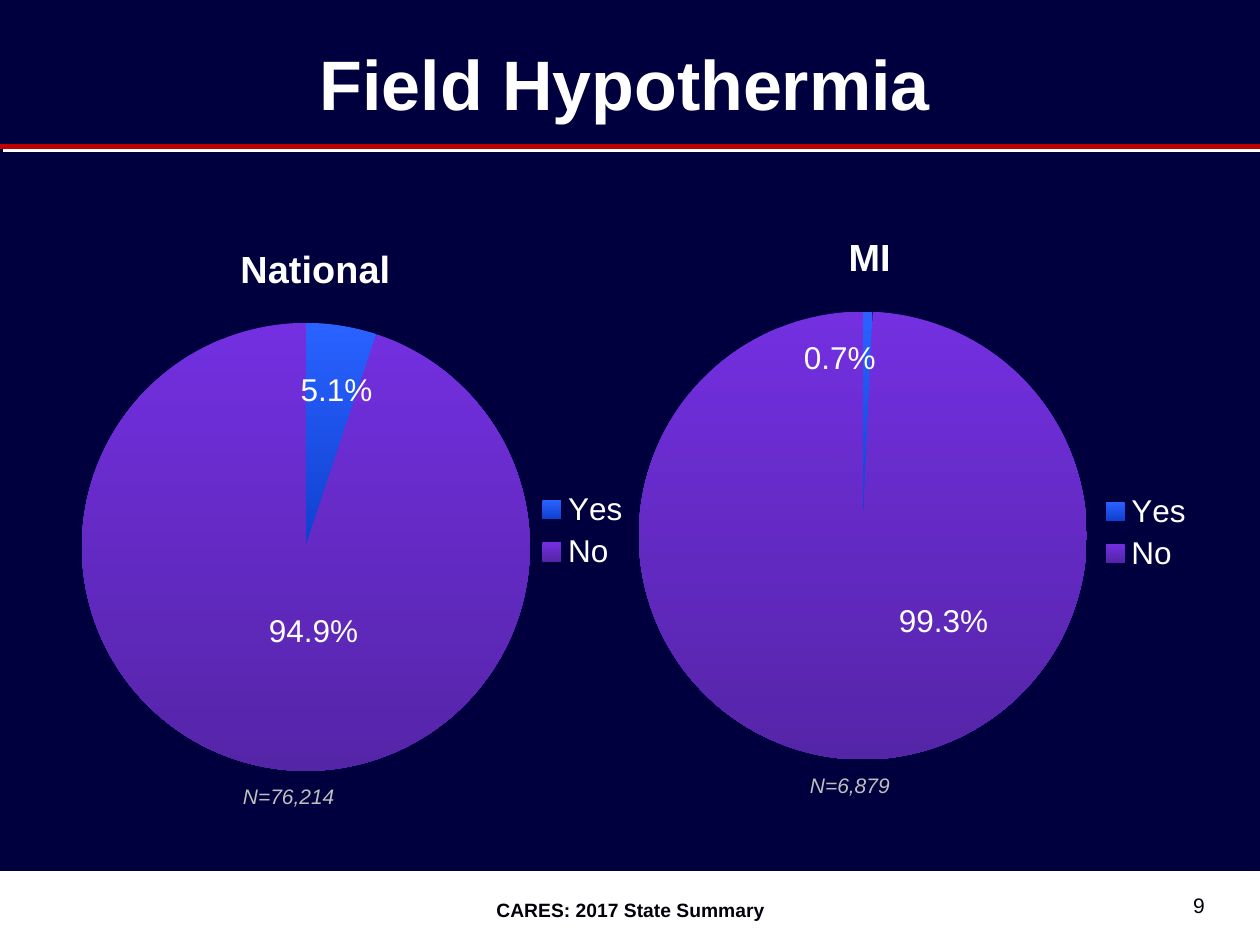
from dataclasses import dataclass

from lxml.etree import SubElement
from pptx import Presentation
from pptx.chart.data import CategoryChartData
from pptx.dml.color import RGBColor
from pptx.enum.chart import XL_CHART_TYPE as ChartType
from pptx.enum.chart import XL_LABEL_POSITION as LabelPosition
from pptx.enum.chart import XL_LEGEND_POSITION as LegendPosition
from pptx.enum.shapes import MSO_CONNECTOR as Connector
from pptx.enum.shapes import MSO_SHAPE as Shape
from pptx.enum.text import MSO_ANCHOR as Anchor
from pptx.enum.text import PP_ALIGN as Align
from pptx.oxml import parse_xml
from pptx.oxml.ns import nsdecls, qn
from pptx.util import Inches, Pt


@dataclass(frozen=True)
class Theme:
    font: str = "Arial"
    background: str = "00003E"
    white: str = "FFFFFF"
    footer_text: str = "00000C"
    note: str = "BFBFBF"
    rule: str = "C00000"
    slices: tuple = (("2962FF", "1040D0"), ("732FE0", "5525A8"))
    title_size: float = 40
    chart_title_size: float = 21.6
    chart_size: float = 18
    note_size: float = 12
    footer_size: float = 11


THEME = Theme()


def color(value):
    return RGBColor.from_string(value)


def format_font(font, size, text_color, **styles):
    font.color.rgb = color(text_color)
    values = {"name": THEME.font, "size": Pt(size), **styles}
    for name, value in values.items():
        setattr(font, name, value)


def add_text(slide, text, box, size, text_color, align=Align.LEFT,
             anchor=Anchor.TOP, **styles):
    frame = slide.shapes.add_textbox(*map(Inches, box)).text_frame
    frame.word_wrap = True
    frame.vertical_anchor = anchor
    paragraph = frame.paragraphs[0]
    paragraph.alignment = align
    run = paragraph.add_run()
    run.text = text
    format_font(run.font, size, text_color, **styles)


def add_footer(slide):
    band = slide.shapes.add_shape(
        Shape.RECTANGLE, Inches(0), Inches(6.92), Inches(10), Inches(0.58))
    band.shadow.inherit = False
    band.fill.solid()
    band.fill.fore_color.rgb = color(THEME.white)
    band.line.color.rgb = color(THEME.white)
    band.line.width = Pt(0.75)
    add_text(slide, "CARES: 2017 State Summary", (3.42, 7.08, 3.17, 0.29),
             THEME.footer_size, THEME.footer_text, Align.CENTER, bold=True)
    add_text(slide, "9", (7.33, 7, 2.33, 0.33), THEME.note_size,
             THEME.footer_text, Align.RIGHT, Anchor.BOTTOM)


def add_title_rule(slide):
    """Draw the red rule with its hard white shadow."""
    rule = slide.shapes.add_connector(
        Connector.STRAIGHT, Inches(0), Inches(1.16), Inches(10), Inches(1.16))
    rule.line.color.rgb = color(THEME.rule)
    rule.line.width = Pt(3)
    rule.element.spPr.append(parse_xml(
        f'<a:effectLst {nsdecls("a")}>'
        f'<a:outerShdw dist="{Pt(2.8)}" dir="2700000" algn="ctr" rotWithShape="0">'
        f'<a:srgbClr val="{THEME.white}"/></a:outerShdw></a:effectLst>'))


def set_layout(parent, index, **values):
    """Give a chart part a manual layout, in fractions of the chart."""
    for old in parent.findall(qn("c:layout")):
        parent.remove(old)
    layout = parse_xml(f'<c:layout {nsdecls("c")}><c:manualLayout/></c:layout>')
    for name, value in values.items():
        SubElement(layout[0], qn(f"c:{name}"), val=str(value))
    parent.insert(index, layout)


def format_slice(point, colors):
    fill = point.format.fill
    fill.gradient()
    fill.gradient_angle = 270
    for stop, value in zip(fill.gradient_stops, colors):
        stop.color.rgb = color(value)
    point.format.line.fill.background()


def format_labels(series, offsets):
    """Show percentages, each moved by its offset from the slice centre."""
    labels = series.data_labels
    values = {"show_percentage": True, "show_value": False,
              "number_format": "0.0%", "number_format_is_linked": False,
              "position": LabelPosition.CENTER}
    for name, value in values.items():
        setattr(labels, name, value)
    format_font(labels.font, THEME.chart_size, THEME.white)
    for index, (colors, (x, y)) in enumerate(zip(THEME.slices, offsets)):
        point = series.points[index]
        format_slice(point, colors)
        point.data_label.position = LabelPosition.CENTER
        label = series.data_labels._element.findall(qn("c:dLbl"))[index]
        label.find(qn("c:showVal")).set("val", "0")
        label.find(qn("c:showPercent")).set("val", "1")
        set_layout(label, 1, x=x, y=y)
        label.insert(2, parse_xml(
            f'<c:numFmt {nsdecls("c")} formatCode="0.0%" sourceLinked="0"/>'))


def add_pie(slide, title, left, top, values, offsets, title_x, legend_at):
    data = CategoryChartData()
    data.categories = ["Yes", "No"]
    data.add_series("Series 1", values)
    chart = slide.shapes.add_chart(
        ChartType.PIE, Inches(left), Inches(top), Inches(5.08), Inches(5.17),
        data).chart
    format_font(chart.font, THEME.chart_size, THEME.white)

    chart.has_title = True
    run = chart.chart_title.text_frame.paragraphs[0].add_run()
    run.text = title
    format_font(run.font, THEME.chart_title_size, THEME.white, bold=True)

    chart.has_legend = True
    chart.legend.position = LegendPosition.RIGHT
    chart.legend.include_in_layout = False
    format_font(chart.legend.font, THEME.chart_size, THEME.white)

    plot = chart.plots[0]
    plot.vary_by_categories = True
    format_labels(plot.series[0], offsets)

    root = chart.element.find(qn("c:chart"))
    edge = {"xMode": "edge", "yMode": "edge"}
    legend_x, legend_y = legend_at
    set_layout(root.find(qn("c:title")), 1, **edge, x=title_x, y=0.09)
    set_layout(root.find(qn("c:legend")), 1, **edge, x=legend_x, y=legend_y,
               w=0.15, h=0.14)
    set_layout(root.find(qn("c:plotArea")), 0, layoutTarget="inner", **edge,
               x=0.063, y=0.22, w=0.7, h=0.69)


def add_note(slide, text, left, top):
    add_text(slide, text, (left, top, 1.43, 0.3), THEME.note_size, THEME.note,
             italic=True)


def main():
    presentation = Presentation()
    presentation.slide_width = Inches(10)
    presentation.slide_height = Inches(7.5)
    slide = presentation.slides.add_slide(presentation.slide_layouts[6])
    slide.background.fill.solid()
    slide.background.fill.fore_color.rgb = color(THEME.background)

    add_footer(slide)
    add_text(slide, "Field Hypothermia", (0.13, 0.03, 9.66, 1.25),
             THEME.title_size, THEME.white, Align.CENTER, Anchor.MIDDLE,
             bold=True)
    add_title_rule(slide)
    add_pie(slide, "MI", 4.75, 1.33, (0.7, 99.3),
            ((-0.04, -0.1), (0.13, -0.04)), 0.38, (0.78, 0.49))
    add_note(slide, "N=6,879", 6.33, 6.08)
    add_pie(slide, "National", 0.33, 1.42, (5.1, 94.9),
            ((0.02, -0.07), (0.04, -0.04)), 0.3, (0.77, 0.47))
    add_note(slide, "N=76,214", 1.83, 6.17)
    presentation.save("out.pptx")


if __name__ == "__main__":
    main()
